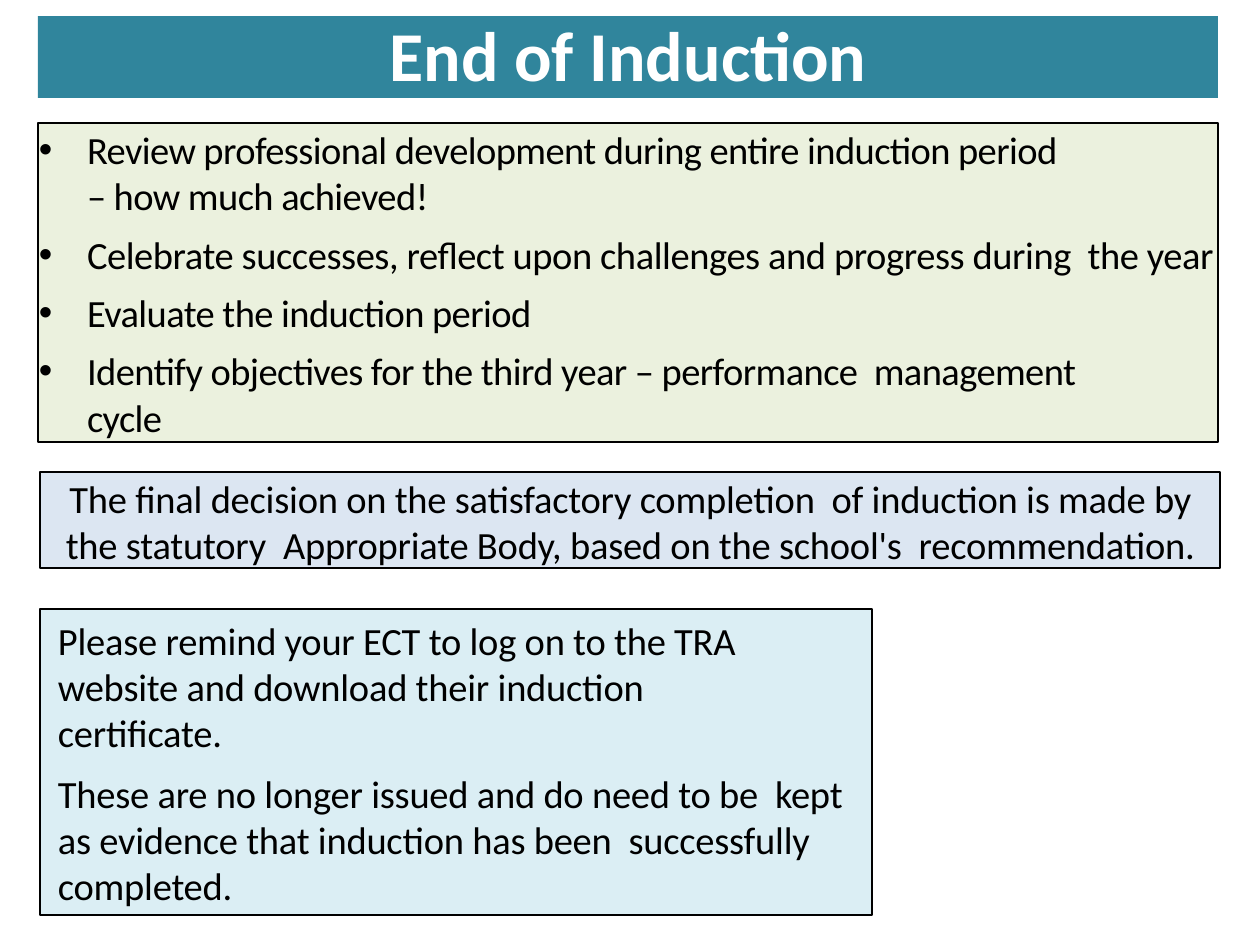
from dataclasses import dataclass

from lxml.etree import SubElement as Sub
from pptx import Presentation
from pptx.dml.color import RGBColor as Rgb
from pptx.enum.text import MSO_ANCHOR as Anchor, PP_ALIGN as Align
from pptx.oxml.ns import qn
from pptx.util import Emu, Pt

SCALE = 914400 / 126
FONT = "Calibri"
BLACK = "000000"


@dataclass
class Para:
    text: str
    track: int
    left: int
    right: int = 0
    hang: int = 0
    before: float = 0
    align: Align = Align.LEFT


@dataclass
class Panel:
    left: int
    top: int
    width: int
    height: int
    fill: str
    side: int
    inset: int
    paras: list[Para]


def px(count: int) -> Emu:
    return Emu(round(count * SCALE))


def tint(code: str) -> Rgb:
    return Rgb.from_string(code)


def place(shape, left: int, top: int, width: int, height: int) -> None:
    shape.left, shape.top = px(left), px(top)
    shape.width, shape.height = px(width), px(height)


def paint(shape, code: str) -> None:
    shape.fill.solid()
    shape.fill.fore_color.rgb = tint(code)


def pad(frame, side: int, top: int) -> None:
    frame.word_wrap = True
    frame.vertical_anchor = Anchor.TOP
    frame.margin_left = frame.margin_right = px(side)
    frame.margin_top = px(top)
    frame.margin_bottom = 0


def style(line, size: int, code: str, bold: bool = False) -> None:
    line.font.name = FONT
    line.font.size = Pt(size)
    line.font.bold = bold
    line.font.color.rgb = tint(code)


def write(line, para: Para) -> None:
    run = line.add_run()
    run.text = para.text
    run.font._element.set("spc", str(para.track))
    line.alignment = para.align
    line.space_before = Pt(para.before)
    props = line._p.get_or_add_pPr()
    props.set("marL", str(px(para.left)))
    props.set("marR", str(px(para.right)))
    props.set("indent", str(px(-para.hang)))
    if para.hang:
        Sub(props, qn("a:buFont"), typeface="Arial")
        Sub(props, qn("a:buChar"), char="•")
    style(line, 22, BLACK)


def draw(slide, panel: Panel) -> None:
    box = slide.shapes.add_textbox(0, 0, 0, 0)
    place(box, panel.left, panel.top, panel.width, panel.height)
    paint(box, panel.fill)
    box.line.color.rgb = tint(BLACK)
    box.line.width = Pt(0.75)
    frame = box.text_frame
    pad(frame, panel.side, panel.inset)
    for order, para in enumerate(panel.paras):
        line = frame.add_paragraph() if order else frame.paragraphs[0]
        write(line, para)


def head(slide, text: str) -> None:
    title = slide.shapes.title
    place(title, 38, 16, 1180, 82)
    paint(title, "30859C")
    title.text = text
    pad(title.text_frame, 0, 0)
    line = title.text_frame.paragraphs[0]
    line.alignment = Align.CENTER
    line.line_spacing = Pt(45.7)
    style(line, 40, "FFFFFF", True)


def point(text: str, track: int, right: int = 0, before: float = 7) -> Para:
    return Para(text, track, 49, right, 48, before)


PANELS = [
    Panel(38, 123, 1180, 319, "EBF1DE", 0, 3, [
        point("Review professional development during entire induction period "
              "– how much achieved!", -30, 150, 0),
        point("Celebrate successes, reflect upon challenges and progress "
              "during  the year", -24),
        point("Evaluate the induction period", -31),
        point("Identify objectives for the third year – performance  "
              "management cycle", -30, 130),
    ]),
    Panel(40, 472, 1180, 96, "DCE6F2", 0, 3, [
        Para("The final decision on the satisfactory completion  of induction "
             "is made by the statutory  Appropriate Body, based on the "
             "school's  recommendation.", -12, 1, align=Align.CENTER),
    ]),
    Panel(40, 609, 832, 306, "DBEEF4", 13, 8, [
        Para("Please remind your ECT to log on to the TRA website and "
             "download their induction certificate.", -10, 5, 90),
        Para("These are no longer issued and do need to be  kept as evidence "
             "that induction has been  successfully completed.", -10, 5,
             before=8.2),
    ]),
]


def main() -> None:
    deck = Presentation()
    deck.slide_width, deck.slide_height = px(1260), px(945)
    slide = deck.slides.add_slide(deck.slide_layouts[5])
    head(slide, "End of Induction")
    for panel in PANELS:
        draw(slide, panel)
    deck.save("out.pptx")


if __name__ == "__main__":
    main()
